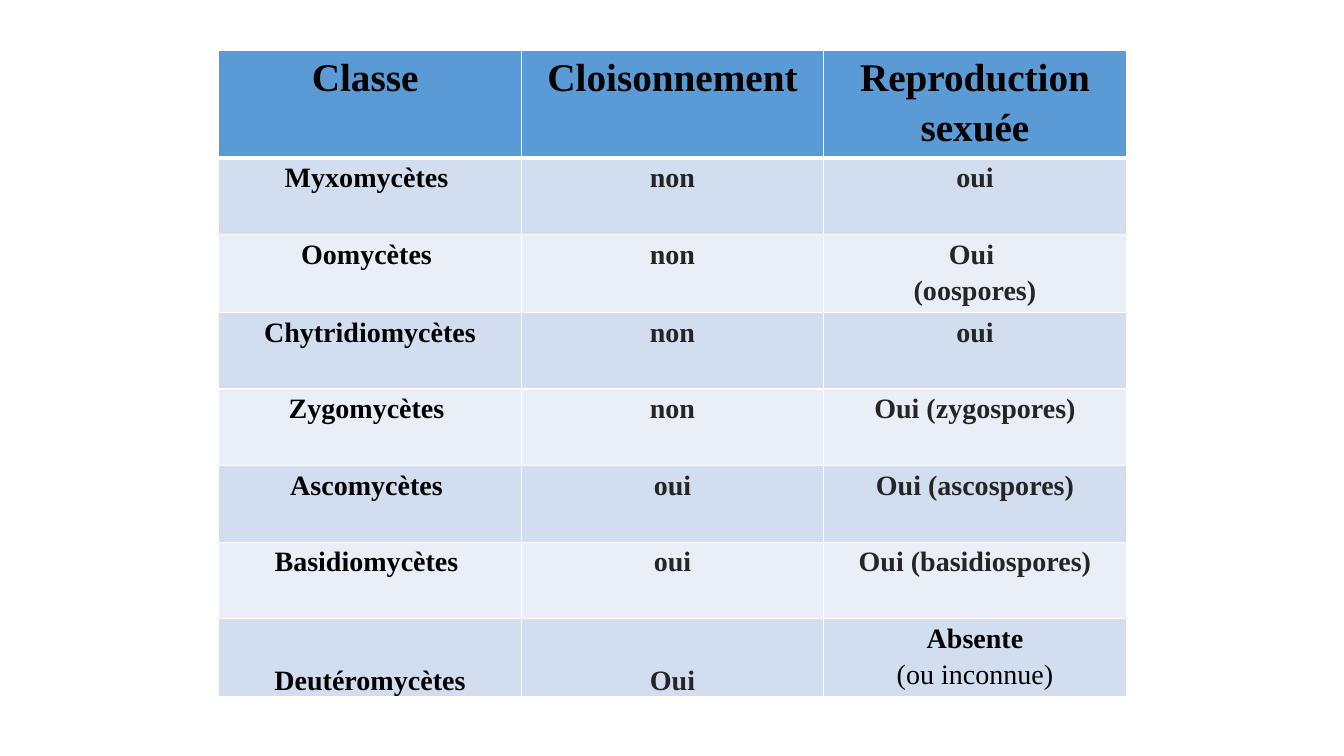
from lxml import etree
from pptx import Presentation
from pptx import util as u
from pptx.dml.color import RGBColor
from pptx.enum import text
from pptx.oxml.ns import qn

HUES = {"head": "5B9BD5", "odd": "D2DEEF", "even": "EAEFF7",
        "rule": "FFFFFF", "ink": "000000", "soft": "252525"}
HEAD = ["Classe ", "Cloisonnement", "Reproduction sexuée"]
FUNGI = [
    ["Myxomycètes ", "non", "oui"],
    ["Oomycètes ", "non", "Oui \n(oospores)"],
    ["Chytridiomycètes", "non", "oui"],
    ["Zygomycètes ", "non", "Oui (zygospores)"],
    ["Ascomycètes ", "oui", "Oui (ascospores)"],
    ["Basidiomycètes ", "oui", "Oui (basidiospores)"],
    ["Deutéromycètes", "Oui", "Absente\n(ou inconnue)"],
]
HIGHS = [1.07, 0.76, 0.77, 0.76, 0.76, 0.76, 0.76, 0.77]


class Deck:
    """Holds the style and the current slide, and draws its table."""

    def __init__(self):
        self.prs = Presentation()
        self.prs.slide_width = u.Inches(13.33)
        self.prs.slide_height = u.Inches(7.5)
        self.slide = self.prs.slides.add_slide(self.prs.slide_layouts[6])
        self.font = "Times New Roman"

    def grid(self, left, top, wide, highs, cols):
        frame = self.slide.shapes.add_table(
            len(highs), cols, u.Inches(left), u.Inches(top),
            u.Inches(wide), u.Inches(sum(highs)))
        for col in frame.table.columns:
            col.width = u.Inches(wide / cols)
        for row, high in zip(frame.table.rows, highs):
            row.height = u.Inches(high)
        return frame.table

    def edge(self, cell, side, width):
        line = etree.SubElement(cell._tc.get_or_add_tcPr(), qn(f"a:{side}"),
                                w=str(u.Pt(width)))
        fill = etree.SubElement(line, qn("a:solidFill"))
        etree.SubElement(fill, qn("a:srgbClr"), val=HUES["rule"])

    def cell(self, cell, words, fill, ink, size, base=1):
        for side, width in (("lnL", 1), ("lnR", 1), ("lnT", 1), ("lnB", base)):
            self.edge(cell, side, width)
        cell.fill.solid()
        cell.fill.fore_color.rgb = RGBColor.from_string(HUES[fill])
        cell.margin_left = cell.margin_right = u.Inches(0.07)
        cell.margin_top = cell.margin_bottom = 0
        for i, part in enumerate(words.split("\n")):
            para = cell.text_frame.paragraphs[0] if i == 0 else cell.text_frame.add_paragraph()
            para.alignment = text.PP_ALIGN.CENTER
            para.line_spacing = 1.15
            run = para.add_run()
            run.text = part
            run.font.name = self.font
            run.font.size = u.Pt(size)
            run.font.bold = part != "(ou inconnue)"
            run.font.color.rgb = RGBColor.from_string(HUES[ink])

    def save(self):
        self.prs.save("out.pptx")


def main():
    deck = Deck()
    table = deck.grid(2.17, 0.5, 9, HIGHS, len(HEAD))
    for c, words in enumerate(HEAD):
        deck.cell(table.cell(0, c), words, "head", "ink", 28, 3)
    last = len(FUNGI)
    for r, row in enumerate(FUNGI, 1):
        for c, words in enumerate(row):
            dark = c == 0 or (r == last and c == 2)
            deck.cell(table.cell(r, c), words, "odd" if r % 2 else "even",
                      "ink" if dark else "soft", 20)
    for c in (0, 1):
        table.cell(last, c).vertical_anchor = text.MSO_ANCHOR.BOTTOM
    deck.save()


if __name__ == "__main__":
    main()
